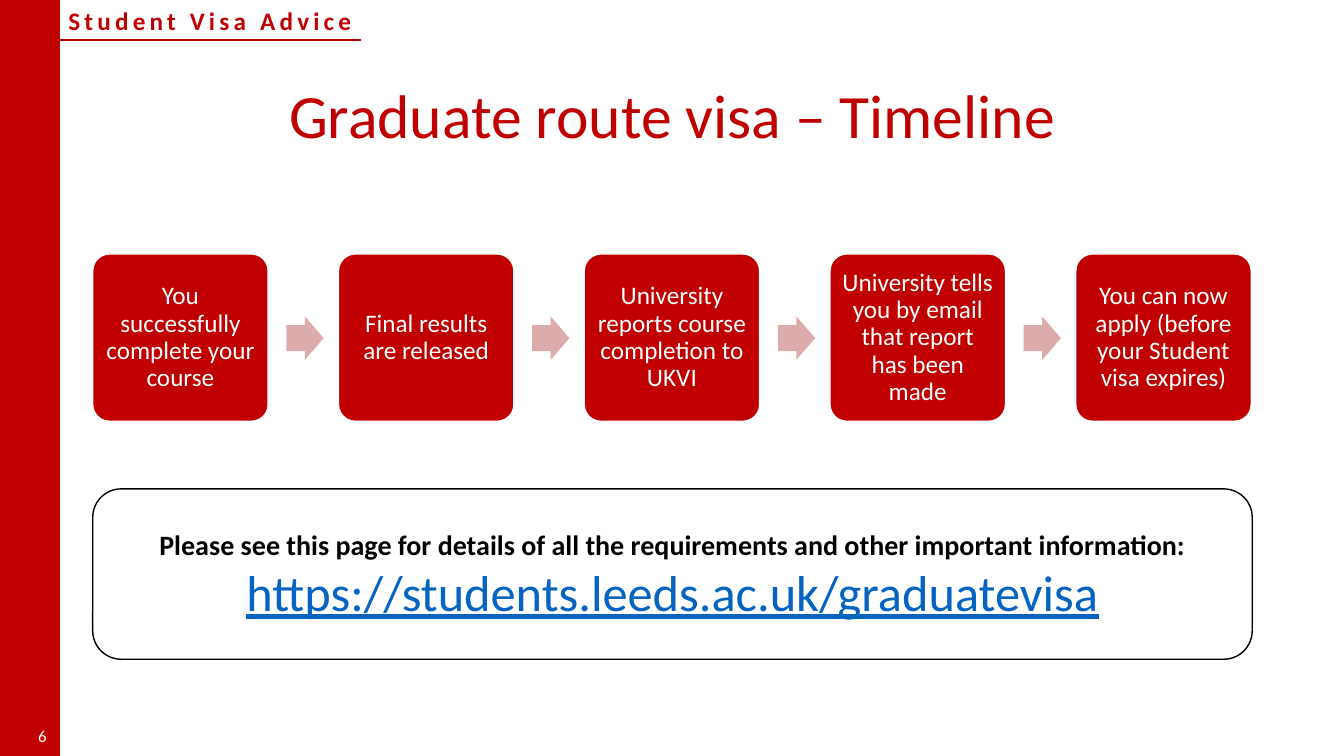
from dataclasses import dataclass

from lxml.etree import SubElement
from pptx import Presentation
from pptx.dml.color import RGBColor
from pptx.enum.shapes import MSO_CONNECTOR, MSO_SHAPE
from pptx.enum.text import MSO_ANCHOR as Anchor, PP_ALIGN as Align
from pptx.oxml.ns import qn
from pptx.util import Inches, Pt


@dataclass(frozen=True)
class Theme:
    font: str = "Calibri"
    red: RGBColor = RGBColor(0xC0, 0x00, 0x00)
    pink: RGBColor = RGBColor(0xDC, 0xAB, 0xAB)
    white: RGBColor = RGBColor(0xFF, 0xFF, 0xFF)
    black: RGBColor = RGBColor(0x00, 0x00, 0x00)
    link: RGBColor = RGBColor(0x05, 0x63, 0xC1)
    title: int = 44
    address: int = 36
    notice: int = 20
    body: int = 18
    number: int = 12


THEME = Theme()

STEPS = [
    "You successfully complete your course",
    "Final results are released",
    "University reports course completion to UKVI",
    "University tells you by email that report has been made",
    "You can now apply (before your Student visa expires)",
]


def write(para, text, size, color, align=Align.CENTER, bold=False, underline=False):
    para.text = text
    para.alignment = align
    span = para.runs[0]
    span.font.name = THEME.font
    span.font.size = Pt(size)
    span.font.color.rgb = color
    span.font.bold = bold
    span.font.underline = underline
    return span


def add_text(page, left, top, width, height, text, size, color, align, anchor, bold=False):
    box = page.shapes.add_textbox(Inches(left), Inches(top), Inches(width), Inches(height))
    box.text_frame.word_wrap = True
    box.text_frame.vertical_anchor = anchor
    return write(box.text_frame.paragraphs[0], text, size, color, align, bold)


def add_block(page, kind, left, top, width, height, fill=None, line=None, adjustments=()):
    block = page.shapes.add_shape(kind, Inches(left), Inches(top), Inches(width), Inches(height))
    block.shadow.inherit = False
    for index, value in enumerate(adjustments):
        block.adjustments[index] = value
    if fill is None:
        block.fill.background()
    else:
        block.fill.solid()
        block.fill.fore_color.rgb = fill
    if line is None:
        block.line.fill.background()
    else:
        block.line.color.rgb = line
        block.line.width = Pt(1)
    block.text_frame.word_wrap = True
    block.text_frame.vertical_anchor = Anchor.MIDDLE
    return block


def add_rule(page, left, right, top):
    rule = page.shapes.add_connector(
        MSO_CONNECTOR.STRAIGHT, Inches(left), Inches(top), Inches(right), Inches(top))
    rule.line.color.rgb = THEME.red
    rule.line.width = Pt(1.5)
    SubElement(rule._element.spPr, qn("a:effectLst"))


def add_step(page, left, text):
    step = add_block(page, MSO_SHAPE.ROUNDED_RECTANGLE, left, 2.52, 1.74, 1.66,
                     THEME.red, THEME.white, [0.1])
    frame = step.text_frame
    frame.margin_left = frame.margin_right = Inches(0.07)
    frame.margin_top = frame.margin_bottom = Inches(0.07)
    para = frame.paragraphs[0]
    write(para, text, THEME.body, THEME.white)
    para.line_spacing = 0.9


def add_timeline(page, left=0.92, pitch=2.4375, arrow_offset=1.92):
    for index, text in enumerate(STEPS):
        step_left = left + index * pitch
        add_step(page, step_left, text)
        if index < len(STEPS) - 1:
            add_block(page, MSO_SHAPE.RIGHT_ARROW, step_left + arrow_offset, 3.14, 0.37, 0.43,
                      THEME.pink, adjustments=[0.6, 0.5])


def add_notice(page):
    notice = add_block(page, MSO_SHAPE.ROUNDED_RECTANGLE, 0.92, 4.85, 11.5, 1.69,
                       line=THEME.black, adjustments=[0.167])
    frame = notice.text_frame
    write(frame.paragraphs[0],
          "Please see this page for details of all the requirements and other important information:",
          THEME.notice, THEME.black, bold=True)
    write(frame.add_paragraph(), "https://students.leeds.ac.uk/graduatevisa",
          THEME.address, THEME.link, underline=True)


def main():
    deck = Presentation()
    deck.slide_width = Inches(13.33)
    deck.slide_height = Inches(7.5)
    page = deck.slides.add_slide(deck.slide_layouts[6])

    add_block(page, MSO_SHAPE.RECTANGLE, -0.01, 0, 0.6, 7.5, THEME.red, THEME.red)
    heading = add_text(page, 0.58, 0, 3.51, 0.4, "Student Visa Advice",
                       THEME.body, THEME.red, Align.LEFT, Anchor.TOP, bold=True)
    heading._r.get_or_add_rPr().set("spc", "300")
    add_rule(page, 0.49, 3.58, 0.4)

    title = "Graduate route visa – Timeline"
    add_text(page, 0.92, 0.4, 11.5, 1.45, title,
             THEME.title, THEME.red, Align.CENTER, Anchor.MIDDLE)
    add_notice(page)
    add_timeline(page)
    add_text(page, -0.01, 7.1, 0.57, 0.4, "6",
             THEME.number, THEME.white, Align.RIGHT, Anchor.MIDDLE)

    deck.save("out.pptx")


if __name__ == "__main__":
    main()
